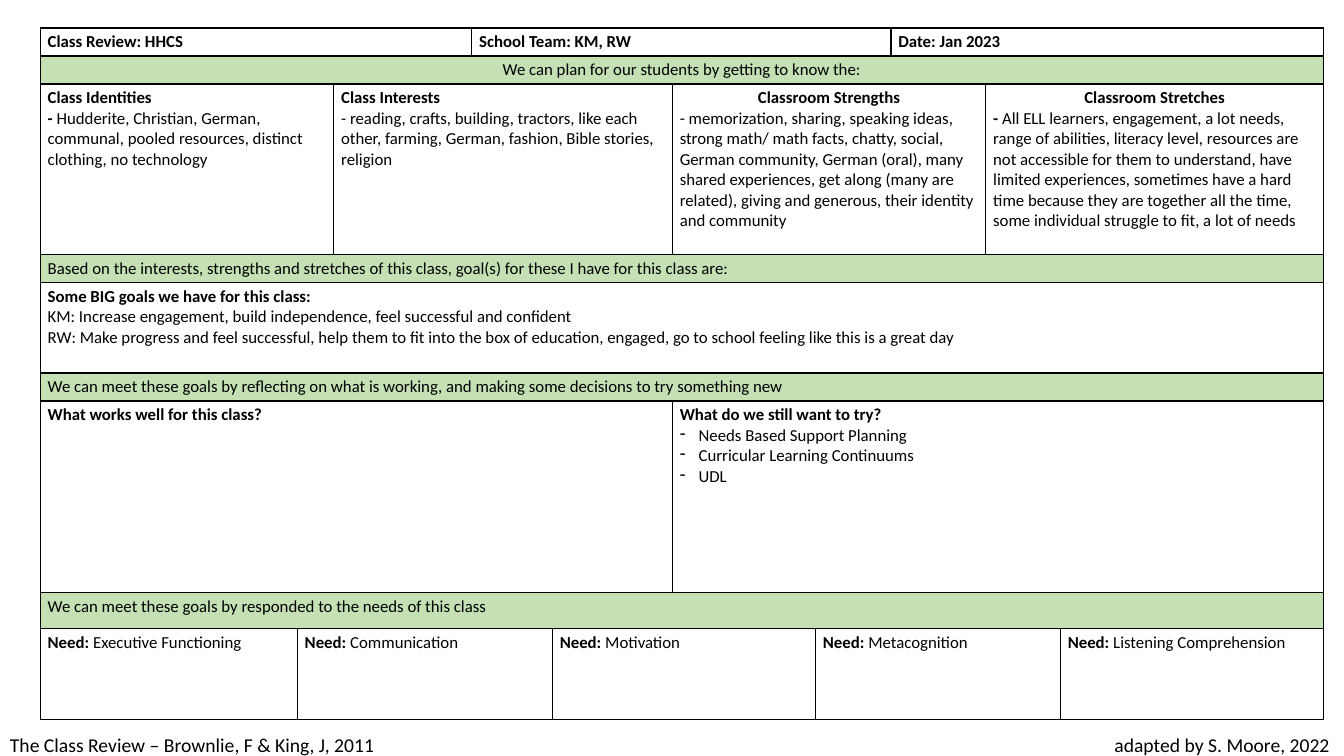
from lxml import etree
from pptx import Presentation
from pptx.dml.color import RGBColor
from pptx.enum.text import PP_ALIGN
from pptx.oxml.ns import qn
from pptx.util import Pt

LEFT, MID = PP_ALIGN.LEFT, PP_ALIGN.CENTER

# Content: a line is (bold part, plain part); a cell is (span, align of head, lines)
TOP = [
    (3, LEFT, [("Class Review: HHCS", "")]),
    (4, LEFT, [("School Team: KM, RW", "")]),
    (3, LEFT, [("Date: Jan 2023", "")]),
]
TRAITS = [
    (2, LEFT, [("Class Identities", ""),
               ("- ", "Hudderite, Christian, German, communal, pooled resources, "
                "distinct clothing, no technology")]),
    (3, LEFT, [("Class Interests", ""),
               ("", "- reading, crafts, building, tractors, like each other, farming, "
                "German, fashion, Bible stories, religion")]),
    (3, MID, [("Classroom Strengths", ""),
              ("", "- memorization, sharing, speaking ideas, strong math/ math facts, "
               "chatty, social, German community, German (oral), many shared "
               "experiences, get along (many are related), giving and generous, "
               "their identity and community")]),
    (2, MID, [("Classroom Stretches", ""),
              ("- ", "All ELL learners, engagement, a lot needs, range of abilities, "
               "literacy level, resources are not accessible for them to understand, "
               "have limited experiences, sometimes have a hard time because they are "
               "together all the time, some individual struggle to fit, a lot of needs")]),
]
GOALS = [(10, LEFT, [
    ("Some BIG goals we have for this class:", ""),
    ("", "KM: Increase engagement, build independence, feel successful and confident"),
    ("", "RW: Make progress and feel successful, help them to fit into the box of "
     "education, engaged, go to school feeling like this is a great day"),
])]
IDEAS = ["Needs Based Support Planning", "Curricular Learning Continuums", "UDL"]
WORKS = [
    (5, LEFT, [("What works well for this class?", "")]),
    (5, LEFT, [("What do we still want to try?", "")] + [("", t) for t in IDEAS]),
]
NEEDS = [(span, LEFT, [("Need: ", need)]) for span, need in [
    (1, "Executive Functioning"), (3, "Communication"), (2, "Motivation"),
    (3, "Metacognition"), (1, "Listening Comprehension")]]


def band(text, align=LEFT):
    return [(10, align, [("", text)])]


# Rows: height, is a green band, cells
ROWS = [
    (20, False, TOP),
    (20, True, band("We can plan for our students by getting to know the:", MID)),
    (122, False, TRAITS),
    (20, True, band("Based on the interests, strengths and stretches of this class, "
                    "goal(s) for these I have for this class are:")),
    (64.5, False, GOALS),
    (20, True, band("We can meet these goals by reflecting on what is working, "
                    "and making some decisions to try something new")),
    (137, False, WORKS),
    (25.7, True, band("We can meet these goals by responded to the needs of this class")),
    (65, False, NEEDS),
]
COLS = [183.6, 26, 98.6, 57.6, 85.7, 102.2, 54, 67.7, 53.3, 187.9]
FOOT = "The Class Review – Brownlie, F & King, J, 2011\tadapted by S. Moore, 2022"

THEME = {"font": "Calibri", "body": 12, "foot": 14, "ink": "000000",
         "band": "C5E0B4", "plain": "FFFFFF", "line": 1}
X, Y, INDENT = 28.8, 20, 13.5


def write(para, text, size, bold=False):
    run = para.add_run()
    run.text = text
    font = run.font
    font.name, font.size, font.bold = THEME["font"], Pt(size), bold
    font.color.rgb = RGBColor.from_string(THEME["ink"])


def border(cell):
    props = cell._tc.get_or_add_tcPr()
    for i, side in enumerate("LRTB"):
        line = etree.Element(qn("a:ln" + side), w=str(Pt(THEME["line"])))
        fill = etree.SubElement(line, qn("a:solidFill"))
        etree.SubElement(fill, qn("a:srgbClr"), val=THEME["ink"])
        props.insert(i, line)


def bullet(para):
    props = para._p.get_or_add_pPr()
    props.set("marL", str(Pt(INDENT)))
    props.set("indent", str(-Pt(INDENT)))
    etree.SubElement(props, qn("a:buChar"), char="-")


def fill_cell(cell, align, lines):
    cell.margin_left = cell.margin_right = Pt(5.3)
    cell.margin_top = cell.margin_bottom = Pt(2.65)
    frame = cell.text_frame
    for i, (head, text) in enumerate(lines):
        para = frame.add_paragraph() if i else frame.paragraphs[0]
        para.alignment = LEFT if i else align
        if text in IDEAS:
            bullet(para)
        if head:
            write(para, head, THEME["body"], True)
        if text:
            write(para, text, THEME["body"])


deck = Presentation()
deck.slide_width, deck.slide_height = Pt(960), Pt(540)
slide = deck.slides.add_slide(deck.slide_layouts[6])

# Review table
high = sum(row[0] for row in ROWS)
table = slide.shapes.add_table(len(ROWS), len(COLS), Pt(X), Pt(Y),
                               Pt(sum(COLS)), Pt(high)).table
for col, wide in zip(table.columns, COLS):
    col.width = Pt(wide)
for r, (tall, green, cells) in enumerate(ROWS):
    table.rows[r].height = Pt(tall)
    for c in range(len(COLS)):
        cell = table.cell(r, c)
        cell.fill.solid()
        cell.fill.fore_color.rgb = RGBColor.from_string(THEME["band" if green else "plain"])
        border(cell)
        # Small type keeps the covered cells from stretching the row
        cell.text_frame.paragraphs[0].font.size = Pt(THEME["body"])
        cell.margin_top = cell.margin_bottom = Pt(2.65)
    c = 0
    for span, align, lines in cells:
        cell = table.cell(r, c)
        if span > 1:
            cell.merge(table.cell(r, c + span - 1))
        fill_cell(cell, align, lines)
        c += span

# Footer: credit at the left, adapter at a right tab
box = slide.shapes.add_textbox(Pt(0), Pt(519.8), Pt(960), Pt(24.2))
box.text_frame.word_wrap = True
para = box.text_frame.paragraphs[0]
tabs = etree.SubElement(para._p.get_or_add_pPr(), qn("a:tabLst"))
etree.SubElement(tabs, qn("a:tab"), pos=str(Pt(942.8)), algn="r")
write(para, FOOT, THEME["foot"])

deck.save("out.pptx")
